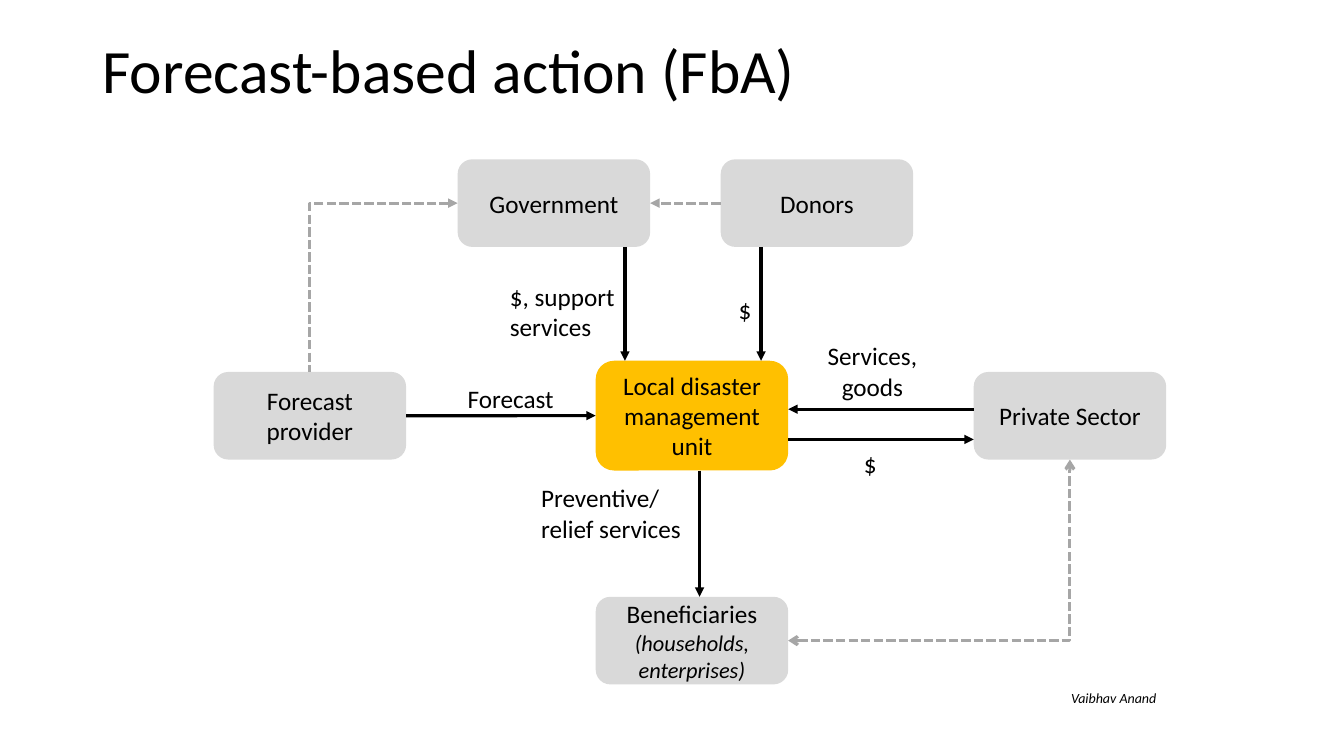
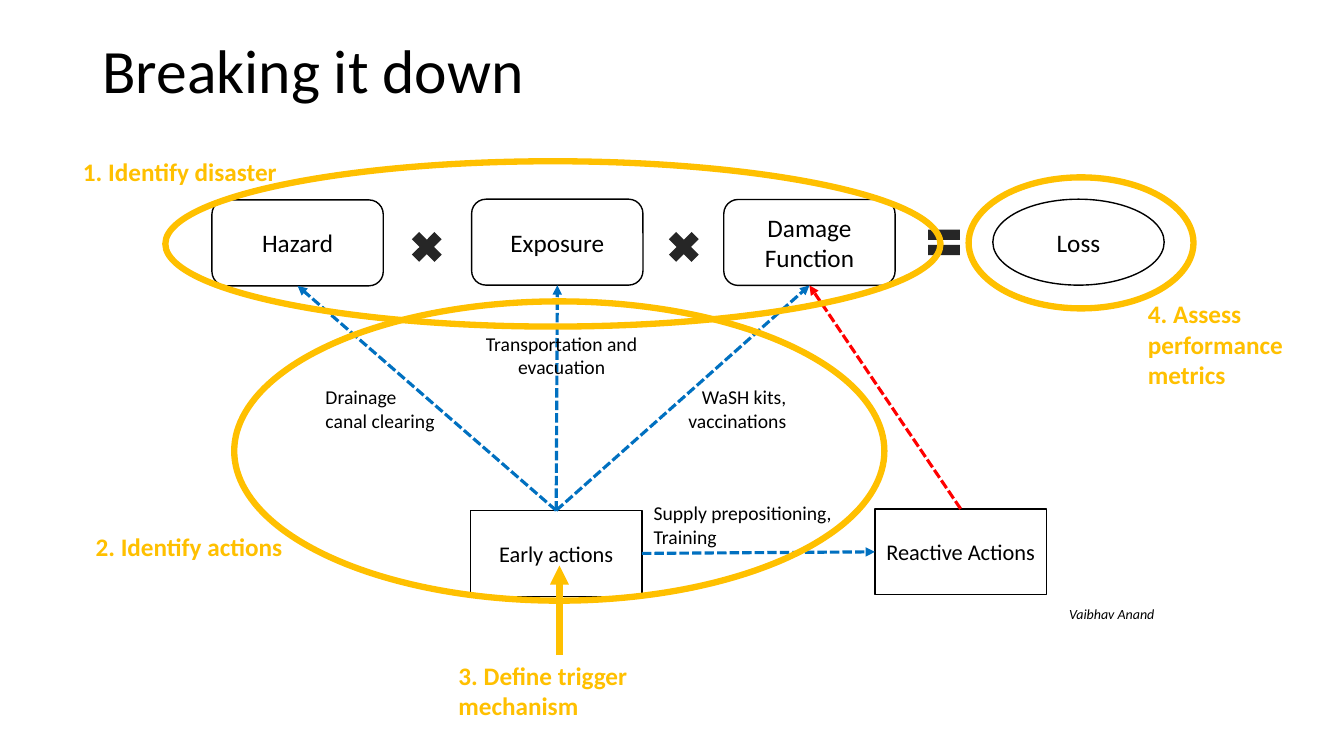
"""Build two slides on forecast-based action: its actors and its working steps."""
from lxml.etree import SubElement
from pptx import Presentation
from pptx.dml.color import RGBColor
from pptx.enum.dml import MSO_LINE
from pptx.enum.shapes import MSO_CONNECTOR, MSO_SHAPE
from pptx.enum.text import MSO_ANCHOR, MSO_AUTO_SIZE, PP_ALIGN
from pptx.oxml.ns import qn
from pptx.util import Pt

FONT = "Calibri"
COLORS = {
    "ink": "000000", "paper": "FFFFFF", "box": "D9D9D9", "dashed": "A6A6A6",
    "accent": "FFC000", "symbol": "262626", "early": "0070C0", "reactive": "FF0000",
}
LEFT, CENTER, RIGHT = PP_ALIGN.LEFT, PP_ALIGN.CENTER, PP_ALIGN.RIGHT
TOP_SIDE, LEFT_SIDE, BOTTOM_SIDE, RIGHT_SIDE = range(4)
AUTHOR = "Vaibhav Anand"

ACTOR_SIZE = (137.5, 62.6)
ACTOR_TOPS = {"upper": 113.8, "middle": 265.7, "lower": 426.3}
UNIT = ("Local disaster management unit", 425.5, 257.7, 137.5, 78.4)
ACTORS = {
    "provider": ("Forecast provider", 152.6, "middle"),
    "donors": ("Donors", 514.8, "upper"),
    "government": ("Government", 326.9, "upper"),
    "private": ("Private Sector", 695.5, "middle"),
    "beneficiaries": (
        ["Beneficiaries", ("(households, enterprises)", {"size": 16, "italic": True})],
        425.5, "lower"),
}
FLOWS = [
    (("provider", RIGHT_SIDE), ("unit", LEFT_SIDE)),
    ((695.5, 292.3), (563, 292.3)),
    ((563, 313.9), (695.5, 313.9)),
    ((543.6, 176.4), (543.6, 257.7)),
    ((446.4, 176.4), (446.4, 257.7)),
    ((499.7, 336.1), (499.7, 426.3)),
]
INDIRECT_FLOWS = [
    (("government", LEFT_SIDE), ("provider", TOP_SIDE),
     {"bent": True, "head": "triangle", "tail": None}),
    (("beneficiaries", RIGHT_SIDE), ("private", BOTTOM_SIDE),
     {"bent": True, "head": "arrow", "tail": "arrow"}),
    (("donors", LEFT_SIDE), ("government", RIGHT_SIDE), {}),
]
FLOW_LABELS = [
    ("Forecast", 326.9, 270, 80.6, 29.1, LEFT),
    ("$", 520.6, 206.6, 53.3, 29.1, LEFT),
    ("$, support services", 357.1, 197.1, 96.5, 50.9, LEFT),
    ("Services, goods", 578.9, 239.8, 88.6, 50.9, CENTER),
    ("$", 577.4, 316.4, 88.6, 29.1, CENTER),
    (["Preventive/", "relief services"], 379.4, 341.3, 121, 50.9, LEFT),
]

FACTOR_SIZE = (122.4, 61.4)
FACTORS = {
    "hazard": ("Hazard", 151.4, 142.8, MSO_SHAPE.ROUNDED_RECTANGLE, 18),
    "exposure": ("Exposure", 336.9, 142.3, MSO_SHAPE.ROUNDED_RECTANGLE, 18),
    "damage": ("Damage Function", 517, 142.5, MSO_SHAPE.ROUNDED_RECTANGLE, 18),
    "loss": ("Loss", 709.2, 142.3, MSO_SHAPE.OVAL, 18),
    "reactive": ("Reactive Actions", 625, 363.5, MSO_SHAPE.RECTANGLE, 16),
    "early": ("Early actions", 336.1, 364.6, MSO_SHAPE.RECTANGLE, 16),
}
SYMBOL_SIZE = (31, 31)
SYMBOLS = [
    (MSO_SHAPE.MATH_MULTIPLY, 289.4, 160.9),
    (MSO_SHAPE.MATH_MULTIPLY, 473, 160.9),
    (MSO_SHAPE.MATH_EQUAL, 658.8, 157.7),
]
EFFECTS = [
    (("reactive", TOP_SIDE), ("damage", BOTTOM_SIDE), "reactive"),
    (("early", TOP_SIDE), ("hazard", BOTTOM_SIDE), "early"),
    (("early", TOP_SIDE), ("exposure", BOTTOM_SIDE), "early"),
    (("early", TOP_SIDE), ("damage", BOTTOM_SIDE), "early"),
    (("early", RIGHT_SIDE), ("reactive", LEFT_SIDE), "early"),
]
EFFECT_LABELS = [
    ("Drainage canal clearing", 225.4, 271.4, 97.2, 41.2, LEFT),
    ("Transportation and evacuation", 330.3, 233.4, 141.8, 41.2, CENTER),
    ("WaSH kits, vaccinations", 475.2, 271.4, 93.6, 41.2, RIGHT),
    (["Supply prepositioning,", "Training"], 459.8, 354.5, 158.4, 41.2, LEFT),
]
STEP_OVALS = [
    (118.1, 115.2, 553.7, 118.1),
    (167.3, 215.3, 464.4, 213.8),
    (691.9, 126.7, 160.6, 93.6),
]
STEP_LABELS = [
    ("1. Identify disaster", 52.2, 108, 160.6, 29.1, LEFT),
    ("2. Identify actions", 61.2, 375.8, 159.8, 29.1, LEFT),
    ("4. Assess performance metrics", 812.9, 209.8, 123.8, 72.7, LEFT),
    ("3. Define trigger mechanism", 320.4, 468.3, 157.7, 50.9, LEFT),
]
TRIGGER_ARROW = ((399.6, 468), (399.6, 404))


def rgb(name):
    """Return a palette colour."""
    return RGBColor.from_string(COLORS[name])


def points(*values):
    """Convert numbers to point lengths."""
    return [Pt(value) for value in values]


def write_text(shape, text, align=LEFT, anchor=MSO_ANCHOR.TOP, line_spacing=None,
               space_after=None, **run_format):
    """Write one paragraph for each line; a line may override the run format."""
    frame = shape.text_frame
    frame.word_wrap = True
    frame.vertical_anchor = anchor
    lines = [text] if isinstance(text, str) else text
    for index, line in enumerate(lines):
        content, changes = (line, {}) if isinstance(line, str) else line
        style = {"size": 18, "color": "ink", "bold": False, "italic": False}
        style.update(run_format)
        style.update(changes)
        paragraph = frame.add_paragraph() if index else frame.paragraphs[0]
        paragraph.alignment = align
        if line_spacing:
            paragraph.line_spacing = line_spacing
        if space_after:
            paragraph.space_after = Pt(space_after)
        run = paragraph.add_run()
        run.text = content
        run.font.name = FONT
        run.font.size = Pt(style["size"])
        run.font.bold = style["bold"]
        run.font.italic = style["italic"]
        run.font.color.rgb = rgb(style["color"])


def add_box(slide, kind, bounds, fill=None, line=None, line_width=1, text=None, size=18):
    """Add a preset shape with optional fill, outline and centred text."""
    shape = slide.shapes.add_shape(kind, *points(*bounds))
    shape.shadow.inherit = False
    if fill:
        shape.fill.solid()
        shape.fill.fore_color.rgb = rgb(fill)
    else:
        shape.fill.background()
    if line:
        shape.line.color.rgb = rgb(line)
        shape.line.width = Pt(line_width)
    else:
        shape.line.fill.background()
    if text:
        write_text(shape, text, align=CENTER, anchor=MSO_ANCHOR.MIDDLE, size=size)
    return shape


def add_arrow(slide, start, end, boxes=None, color="ink", width=2.25, dashed=False,
              bent=False, head=None, tail="triangle"):
    """Join two places, each a point or a (box name, side) pair."""
    kind = MSO_CONNECTOR.ELBOW if bent else MSO_CONNECTOR.STRAIGHT
    connector = slide.shapes.add_connector(kind, *points(0, 0, 0, 0))
    if isinstance(start[0], str):
        connector.begin_connect(boxes[start[0]], start[1])
    else:
        connector.begin_x, connector.begin_y = points(*start)
    if isinstance(end[0], str):
        connector.end_connect(boxes[end[0]], end[1])
    else:
        connector.end_x, connector.end_y = points(*end)
    connector.line.color.rgb = rgb(color)
    connector.line.width = Pt(width)
    if dashed:
        connector.line.dash_style = MSO_LINE.SQUARE_DOT
    properties = connector.element.spPr
    if bent:
        properties.find(qn("a:prstGeom")).set("prst", "bentConnector2")
    outline = properties.find(qn("a:ln"))
    for tag, arrowhead in (("a:headEnd", head), ("a:tailEnd", tail)):
        if arrowhead:
            SubElement(outline, qn(tag)).set("type", arrowhead)
    SubElement(properties, qn("a:effectLst"))


def add_label(slide, text, left, top, width, height, align, **text_format):
    """Add a text box that grows with its text."""
    label = slide.shapes.add_textbox(*points(left, top, width, height))
    write_text(label, text, align=align, **text_format)
    label.text_frame.auto_size = MSO_AUTO_SIZE.SHAPE_TO_FIT_TEXT


def add_titled_slide(presentation, title_text):
    """Add a title-only slide with the shared title style."""
    slide = presentation.slides.add_slide(presentation.slide_layouts[5])
    title = slide.shapes.title
    title.left, title.top, title.width, title.height = points(66, 0, 828, 104.4)
    title.text_frame.auto_size = MSO_AUTO_SIZE.NONE
    write_text(title, title_text, anchor=MSO_ANCHOR.MIDDLE, line_spacing=0.9, size=44)
    return slide


def add_credit(slide, left, top):
    """Add the author's name."""
    add_label(slide, AUTHOR, left, top, 118.8, 19.4, RIGHT,
              size=10, italic=True, space_after=6)


def build_actors_slide(presentation):
    """Draw the actors and the flows between them."""
    slide = add_titled_slide(presentation, "Forecast-based action (FbA)")
    rounded = MSO_SHAPE.ROUNDED_RECTANGLE
    boxes = {"unit": add_box(slide, rounded, UNIT[1:], fill="accent", text=UNIT[0])}
    for name, (text, left, row) in ACTORS.items():
        bounds = (left, ACTOR_TOPS[row], *ACTOR_SIZE)
        boxes[name] = add_box(slide, rounded, bounds, fill="box", text=text)
    for start, end in FLOWS:
        add_arrow(slide, start, end, boxes)
    for start, end, options in INDIRECT_FLOWS:
        add_arrow(slide, start, end, boxes, color="dashed", dashed=True, **options)
    for label in FLOW_LABELS:
        add_label(slide, *label)
    add_credit(slide, 714.2, 488.9)


def build_steps_slide(presentation):
    """Draw the loss equation, the actions and the four steps."""
    slide = add_titled_slide(presentation, "Breaking it down")
    boxes = {}
    for name, (text, left, top, kind, size) in FACTORS.items():
        boxes[name] = add_box(slide, kind, (left, top, *FACTOR_SIZE), fill="paper",
                              line="ink", text=text, size=size)
    for kind, left, top in SYMBOLS:
        add_box(slide, kind, (left, top, *SYMBOL_SIZE), fill="symbol")
    for start, end, color in EFFECTS:
        add_arrow(slide, start, end, boxes, color=color, dashed=True)
    for label in EFFECT_LABELS:
        add_label(slide, *label, size=14)
    for bounds in STEP_OVALS:
        add_box(slide, MSO_SHAPE.OVAL, bounds, line="accent", line_width=4.5)
    for label in STEP_LABELS:
        add_label(slide, *label, color="accent", bold=True)
    add_arrow(slide, *TRIGGER_ARROW, color="accent", width=4.5)
    add_credit(slide, 712.8, 429.1)


def main():
    """Build and save the presentation."""
    presentation = Presentation()
    presentation.slide_width, presentation.slide_height = points(960, 540)
    build_actors_slide(presentation)
    build_steps_slide(presentation)
    presentation.save("out.pptx")


if __name__ == "__main__":
    main()
